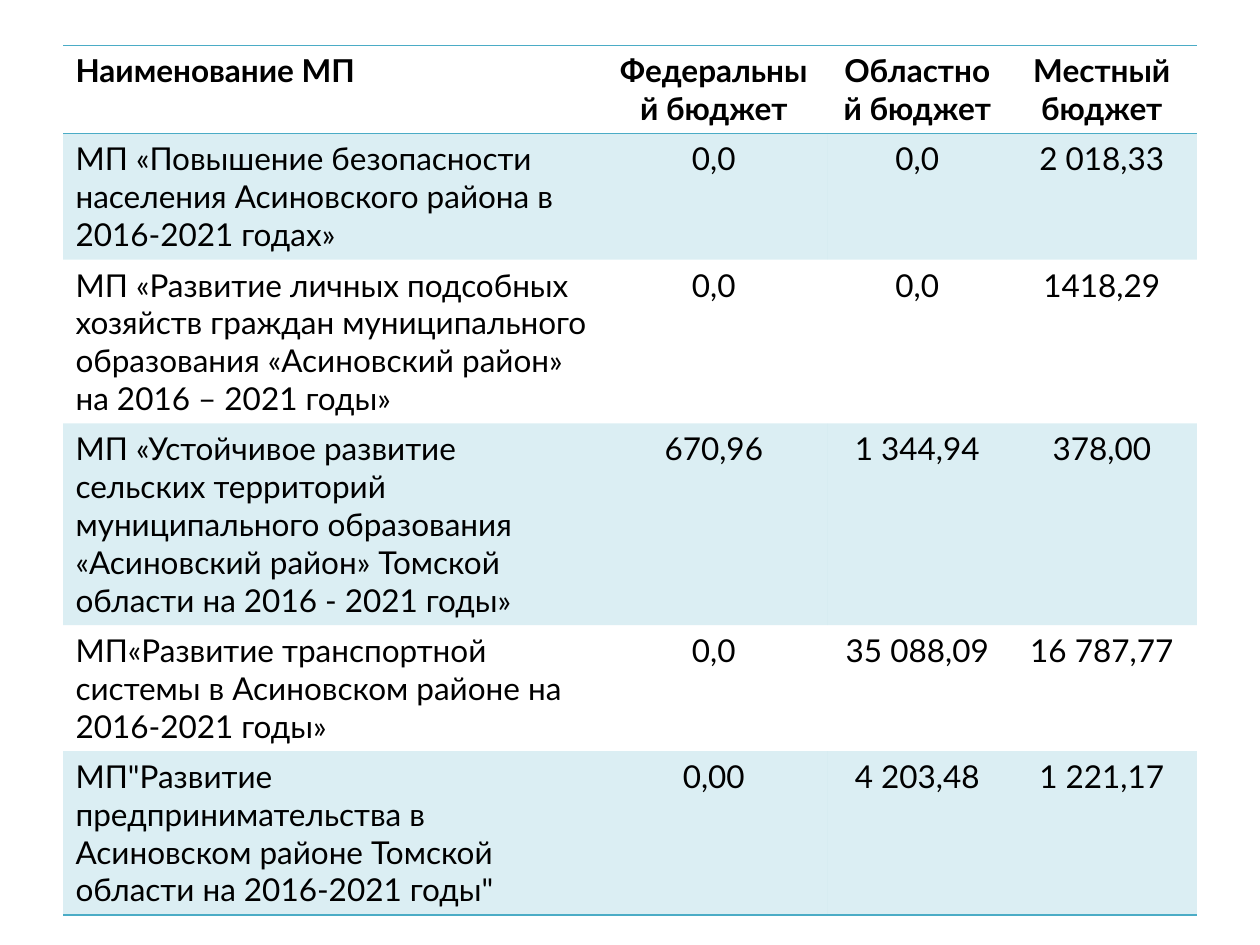
from dataclasses import dataclass

from lxml import etree
from pptx import Presentation
from pptx.dml.color import RGBColor
from pptx.enum.text import PP_ALIGN
from pptx.oxml.ns import qn
from pptx.util import Inches, Pt

LEFT, CENTER = PP_ALIGN.LEFT, PP_ALIGN.CENTER
BLANK_LAYOUT = 6


@dataclass(frozen=True)
class Theme:
    font: str = "Lato"
    size: int = 18
    text: str = "000000"
    accent: str = "4BACC6"
    band_opacity: int = 20
    rule_width: int = 1


THEME = Theme()

COLUMN_WIDTHS = (4.26, 1.81, 1.42, 1.51)
ROW_HEIGHTS = (0.7, 1, 1.3, 1.6, 1, 1.3)
BUDGETS = (
    ("Наименование МП", "Федеральный бюджет", "Областной бюджет", "Местный бюджет"),
    ("МП «Повышение безопасности населения Асиновского района в 2016-2021 годах»",
     "0,0", "0,0", "2 018,33"),
    ("МП «Развитие личных подсобных хозяйств граждан муниципального образования "
     "«Асиновский район» на 2016 – 2021 годы»",
     "0,0", "0,0", "1418,29"),
    ("МП «Устойчивое развитие сельских территорий муниципального образования "
     "«Асиновский район» Томской области на 2016 - 2021 годы»",
     "670,96", "1 344,94", "378,00"),
    ("МП«Развитие транспортной системы в Асиновском районе на 2016-2021 годы»",
     "0,0", "35 088,09", "16 787,77"),
    ("МП\"Развитие предпринимательства в Асиновском районе Томской области "
     "на 2016-2021 годы\"",
     "0,00", "4 203,48", "1 221,17"),
)


def write_cell(cell, text, align, bold):
    para = cell.text_frame.paragraphs[0]
    para.alignment = align
    span = para.add_run()
    span.text = text
    span.font.name = THEME.font
    span.font.size = Pt(THEME.size)
    span.font.bold = bold
    span.font.color.rgb = RGBColor.from_string(THEME.text)


def fill_cell(cell, banded):
    if not banded:
        cell.fill.background()
        return
    cell.fill.solid()
    cell.fill.fore_color.rgb = RGBColor.from_string(THEME.accent)
    color = cell._tc.tcPr.find(qn("a:solidFill")).find(qn("a:srgbClr"))
    etree.SubElement(color, qn("a:alpha"), val=str(THEME.band_opacity * 1000))


def rule_cell(cell, ruled_sides):
    """Draw the named sides and clear the others; lines precede the fill."""
    properties = cell._tc.get_or_add_tcPr()
    for position, side in enumerate("LRTB"):
        line = etree.Element(qn(f"a:ln{side}"), w=str(Pt(THEME.rule_width)))
        if side in ruled_sides:
            paint = etree.SubElement(line, qn("a:solidFill"))
            etree.SubElement(paint, qn("a:srgbClr"), val=THEME.accent)
        else:
            etree.SubElement(line, qn("a:noFill"))
        properties.insert(position, line)


def add_budget_table(page, left, top, width, height):
    frame = page.shapes.add_table(len(BUDGETS), len(COLUMN_WIDTHS),
                                  left, top, width, height)
    table = frame.table
    table.horz_banding = False
    for column, column_width in zip(table.columns, COLUMN_WIDTHS):
        column.width = Inches(column_width)
    for row, row_height in zip(table.rows, ROW_HEIGHTS):
        row.height = Inches(row_height)

    # Rules frame the header and close the last row; odd rows are tinted
    ruled_sides = {0: "TB", 1: "T", len(BUDGETS) - 1: "B"}
    for row_index, values in enumerate(BUDGETS):
        for column_index, text in enumerate(values):
            cell = table.cell(row_index, column_index)
            write_cell(cell, text, CENTER if column_index else LEFT,
                       bold=row_index == 0)
            fill_cell(cell, banded=row_index % 2 == 1)
            rule_cell(cell, ruled_sides.get(row_index, ""))


def main():
    deck = Presentation()
    deck.slide_width, deck.slide_height = Inches(10), Inches(7.5)
    page = deck.slides.add_slide(deck.slide_layouts[BLANK_LAYOUT])
    add_budget_table(page, Inches(0.5), Inches(0.36),
                     Inches(sum(COLUMN_WIDTHS)), Inches(sum(ROW_HEIGHTS)))
    deck.save("out.pptx")


if __name__ == "__main__":
    main()
